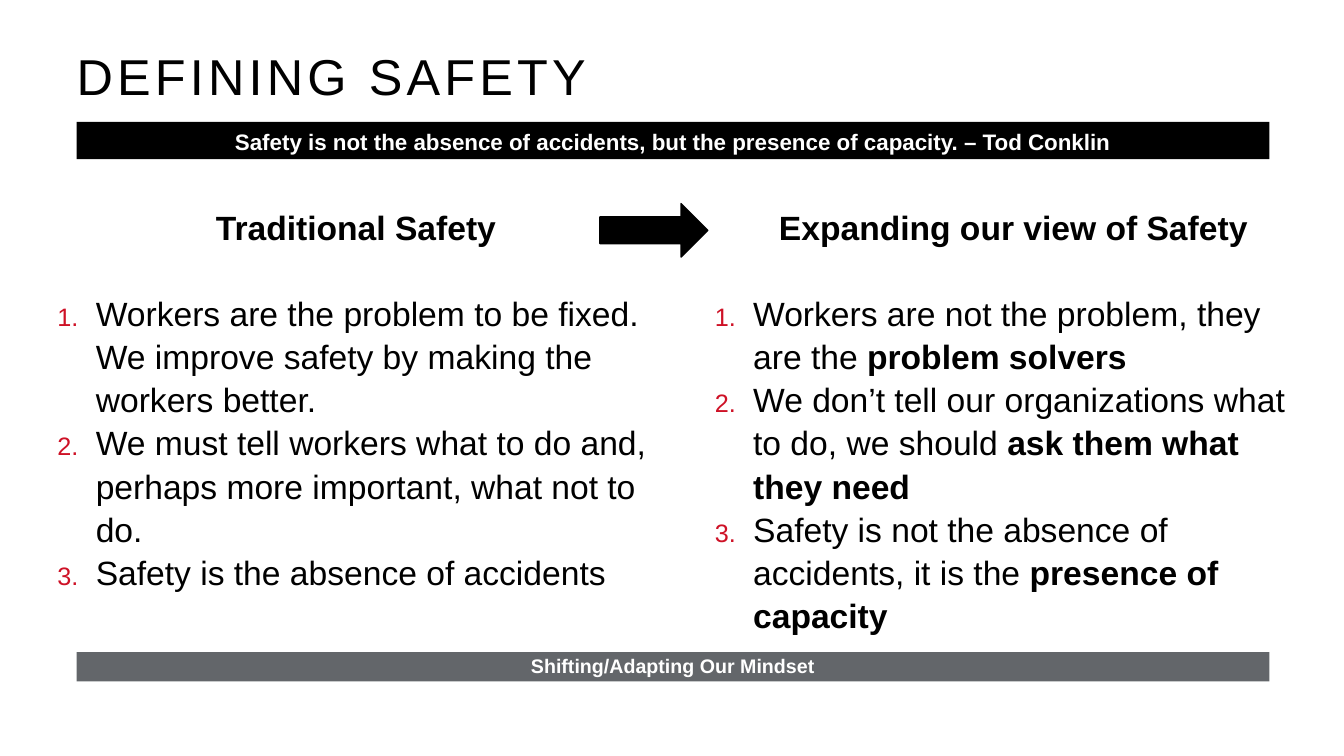
from lxml import etree
from pptx import Presentation
from pptx import util as u
from pptx.dml.color import RGBColor
from pptx.enum import shapes, text
from pptx.oxml.ns import qn

Inches, Pt = u.Inches, u.Pt
COLORS = {"black": "000000", "white": "FFFFFF", "gray": "63666A", "red": "CE1126"}
LINE_SPACING = 1.07
TRADITIONAL = [
    [("Workers are the problem to be fixed. We improve safety by making the workers better.", False)],
    [("We must tell workers what to do and, perhaps more important, what not to do.", False)],
    [("Safety is the absence of accidents", False)],
]
EXPANDED = [
    [("Workers are not the problem, they are the ", False), ("problem solvers", True)],
    [("We don’t tell our organizations what to do, we should ", False),
     ("ask them what they need", True)],
    [("Safety is not the absence of accidents, it is the ", False),
     ("presence of capacity", True)],
]


def color(name):
    return RGBColor.from_string(COLORS[name])


def style_run(run, size, color_name="black", bold=False):
    run.font.name = "Arial"
    run.font.size = Pt(size)
    run.font.bold = bold
    run.font.color.rgb = color(color_name)


def set_margins(frame, left=0, top=0, right=0, bottom=0):
    frame.word_wrap = True
    frame.margin_left, frame.margin_right = Inches(left), Inches(right)
    frame.margin_top, frame.margin_bottom = Inches(top), Inches(bottom)


def add_text_box(slide, left, top, width, height):
    box = slide.shapes.add_textbox(Inches(left), Inches(top), Inches(width), Inches(height))
    set_margins(box.text_frame)
    return box.text_frame


def add_title(slide, title):
    paragraph = add_text_box(slide, 0.76, 0.56, 11.82, 0.46).paragraphs[0]
    paragraph.text = title
    paragraph.line_spacing = 0.8
    style_run(paragraph.runs[0], 36)
    paragraph.runs[0].font._element.set("spc", "300")


def add_filled_shape(slide, kind, left, top, width, height, fill):
    shape = slide.shapes.add_shape(
        kind, Inches(left), Inches(top), Inches(width), Inches(height))
    shape.shadow.inherit = False
    shape.fill.solid()
    shape.fill.fore_color.rgb = color(fill)
    shape.line.fill.background()
    return shape


def add_banner(slide, top, height, fill, message, size, space_after=0):
    shape = add_filled_shape(
        slide, shapes.MSO_SHAPE.RECTANGLE, 0.76, top, 11.83, height, fill)
    frame = shape.text_frame
    set_margins(frame, 0.68, 0.07, 0.68, 0.04)
    frame.vertical_anchor = text.MSO_ANCHOR.BOTTOM
    paragraph = frame.paragraphs[0]
    paragraph.text = message
    paragraph.alignment = text.PP_ALIGN.CENTER
    paragraph.line_spacing = Pt(13)
    paragraph.space_after = Pt(space_after)
    style_run(paragraph.runs[0], size, "white", True)


def add_arrow(slide):
    arrow = add_filled_shape(
        slide, shapes.MSO_SHAPE.RIGHT_ARROW, 5.95, 2.02, 1.07, 0.53, "black")
    arrow.line.color.rgb = color("black")
    arrow.line.width = Pt(1)


def number_paragraph(paragraph):
    """Give the paragraph a small red automatic number and a hanging indent."""
    properties = paragraph._p.get_or_add_pPr()
    properties.set("marL", str(Inches(0.38)))
    properties.set("indent", str(-Inches(0.38)))
    bullet_color = etree.SubElement(properties, qn("a:buClr"))
    etree.SubElement(bullet_color, qn("a:srgbClr"), val=COLORS["red"])
    etree.SubElement(properties, qn("a:buSzPct"), val="75000")
    etree.SubElement(properties, qn("a:buFont"), typeface="Arial")
    etree.SubElement(properties, qn("a:buAutoNum"), type="arabicPeriod")


def add_column(slide, left, heading, items):
    frame = add_text_box(slide, left, 2.02, 5.92, 4.74)
    paragraph = frame.paragraphs[0]
    paragraph.text = heading
    paragraph.alignment = text.PP_ALIGN.CENTER
    paragraph.line_spacing = LINE_SPACING
    paragraph.space_after = Pt(31)
    style_run(paragraph.runs[0], 24, bold=True)
    for item in items:
        paragraph = frame.add_paragraph()
        number_paragraph(paragraph)
        paragraph.line_spacing = LINE_SPACING
        for words, bold in item:
            run = paragraph.add_run()
            run.text = words
            style_run(run, 24, bold=bold)


def main():
    presentation = Presentation()
    presentation.slide_width, presentation.slide_height = Inches(13.33), Inches(7.5)
    slide = presentation.slides.add_slide(presentation.slide_layouts[6])
    add_title(slide, "DEFINING SAFETY")
    add_banner(slide, 1.21, 0.37, "black",
               "Safety is not the absence of accidents, but the presence of capacity. – Tod Conklin", 16)
    add_column(slide, 0.57, "Traditional Safety", TRADITIONAL)
    add_column(slide, 7.09, "Expanding our view of Safety", EXPANDED)
    add_arrow(slide)
    add_banner(slide, 6.47, 0.29, "gray", "Shifting/Adapting Our Mindset", 14, space_after=6)
    presentation.save("out.pptx")


if __name__ == "__main__":
    main()
